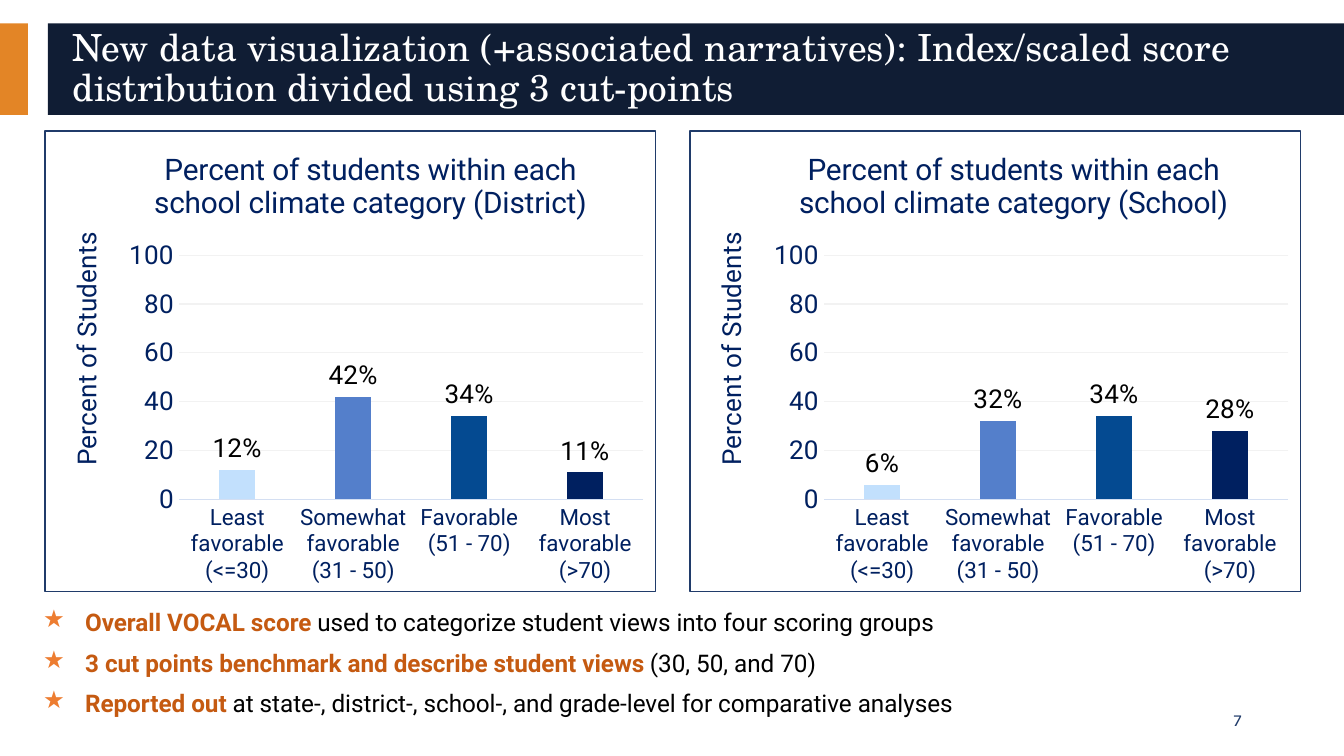
import lxml.etree
import pptx
import pptx.chart.data
import pptx.dml.color
import pptx.enum.chart
import pptx.enum.shapes
import pptx.enum.text
import pptx.oxml.ns
import pptx.util

Pt = pptx.util.Pt
qn = pptx.oxml.ns.qn

COLORS = {
    "orange": "E38526", "navy": "101D34", "white": "FFFFFF", "black": "000000",
    "border": "203B6A", "text": "002060", "axis": "D4DFF2", "grid": "F2F2F2",
    "star": "ED7D31", "strong": "C55A11",
}
BAR_COLORS = ["C2E0FD", "547FCB", "044A91", "002060"]
CATEGORIES = ["Least favorable\n(<=30)", "Somewhat favorable\n(31 - 50)",
              "Favorable\n(51 - 70)", "Most favorable\n(>70)"]
CHARTS = [("District", 23.75, [12, 42, 34, 11]), ("School", 369.25, [6, 32, 34, 28])]
BULLETS = [
    ("Overall VOCAL score ", "used to categorize student views into four scoring groups"),
    ("3 cut points benchmark and describe student views ", "(30, 50, and 70)"),
    ("Reported out ", "at state-, district-, school-, and grade-level for comparative analyses"),
]
TIGHT_FRAME = {
    "word_wrap": True, "vertical_anchor": pptx.enum.text.MSO_ANCHOR.MIDDLE,
    "margin_left": Pt(5.4), "margin_right": Pt(5.4),
    "margin_top": Pt(2.7), "margin_bottom": Pt(2.7),
}


def apply(target, values):
    for name, value in values.items():
        setattr(target, name, value)


def rgb(value):
    return pptx.dml.color.RGBColor.from_string(value)


def format_font(font, color, size, name="Roboto", bold=False):
    apply(font, {"name": name, "size": Pt(size), "bold": bold})
    font.color.rgb = rgb(COLORS[color])


def format_line(line, color):
    line.color.rgb = rgb(COLORS[color])
    line.width = Pt(0.75)


def add_band(page, left, width, color):
    band = page.shapes.add_shape(
        pptx.enum.shapes.MSO_SHAPE.RECTANGLE, Pt(left), Pt(12.5), Pt(width), Pt(49))
    band.shadow.inherit = False
    band.fill.solid()
    band.fill.fore_color.rgb = rgb(COLORS[color])
    band.line.fill.background()


def add_title(page, text):
    title = page.shapes.title
    page.shapes._spTree.append(title._element)
    apply(title, {"left": Pt(33.5), "top": Pt(17), "width": Pt(672), "height": Pt(40)})
    frame = title.text_frame
    apply(frame, TIGHT_FRAME)
    frame.auto_size = pptx.enum.text.MSO_AUTO_SIZE.NONE
    para = frame.paragraphs[0]
    apply(para, {"alignment": pptx.enum.text.PP_ALIGN.LEFT, "line_spacing": 0.9})
    span = para.add_run()
    span.text = text
    format_font(span.font, "white", 20, "TeX Gyre Schola")


def add_page_number(page, number):
    box = page.shapes.add_textbox(Pt(508.5), Pt(375), Pt(162), Pt(21.5))
    apply(box.text_frame, TIGHT_FRAME)
    para = box.text_frame.paragraphs[0]
    para.alignment = pptx.enum.text.PP_ALIGN.RIGHT
    span = para.add_run()
    span.text = number
    format_font(span.font, "border", 9, "Karla")


def set_layout(element, **values):
    layout = element.find(qn("c:layout"))
    if layout is None:
        layout = lxml.etree.SubElement(element, qn("c:layout"))
        element.insert(0, layout)
    manual = lxml.etree.SubElement(layout, qn("c:manualLayout"))
    for name, value in values.items():
        lxml.etree.SubElement(manual, qn(f"c:{name}")).set("val", str(value))


def set_chart_text(title, text, size, x, y):
    para = title.text_frame.paragraphs[0]
    span = para.add_run()
    span.text = text
    format_font(span.font, "text", size)
    set_layout(title._element, xMode="edge", yMode="edge", x=x, y=y)


def add_border(chart):
    properties = lxml.etree.Element(qn("c:spPr"))
    lxml.etree.SubElement(properties, qn("a:noFill"))
    line = lxml.etree.SubElement(properties, qn("a:ln"), w=str(Pt(0.75)))
    fill = lxml.etree.SubElement(line, qn("a:solidFill"))
    lxml.etree.SubElement(fill, qn("a:srgbClr"), val=COLORS["border"])
    chart._chartSpace.find(qn("c:chart")).addnext(properties)


def format_axes(chart):
    none = pptx.enum.chart.XL_TICK_MARK.NONE
    category_axis, value_axis = chart.category_axis, chart.value_axis
    for axis, size in ((category_axis, 12), (value_axis, 14)):
        apply(axis, {"major_tick_mark": none, "minor_tick_mark": none})
        format_font(axis.tick_labels.font, "text", size)
    category_axis.has_major_gridlines = False
    format_line(category_axis.format.line, "axis")
    apply(value_axis, {"minimum_scale": 0, "maximum_scale": 100, "major_unit": 20,
                       "has_major_gridlines": True})
    value_axis.format.line.fill.background()
    format_line(value_axis.major_gridlines.format.line, "grid")
    set_chart_text(value_axis.axis_title, "Percent of Students", 14, 0.03, 0.21)


def format_bars(plot):
    apply(plot, {"gap_width": 219, "overlap": -27, "vary_by_categories": False,
                 "has_data_labels": True})
    labels = plot.data_labels
    apply(labels, {"show_value": True, "number_format": '0"%"',
                   "number_format_is_linked": False,
                   "position": pptx.enum.chart.XL_LABEL_POSITION.OUTSIDE_END})
    format_font(labels.font, "black", 14)
    series = plot.series[0]
    series.format.fill.solid()
    series.format.fill.fore_color.rgb = rgb(COLORS["border"])
    for index, color in enumerate(BAR_COLORS):
        fill = series.points[index].format.fill
        fill.solid()
        fill.fore_color.rgb = rgb(color)


def add_climate_chart(page, group, left, values):
    data = pptx.chart.data.CategoryChartData()
    data.categories = CATEGORIES
    data.add_series("Series 1", values)
    chart = page.shapes.add_chart(
        pptx.enum.chart.XL_CHART_TYPE.COLUMN_CLUSTERED,
        Pt(left), Pt(69.75), Pt(327.75), Pt(247.5), data).chart
    apply(chart, {"has_legend": False, "has_title": True})
    format_font(chart.font, "border", 14, "Arial")
    text = f"Percent of students within each school climate category ({group})"
    set_chart_text(chart.chart_title, text, 16, 0.17, 0.03)
    format_axes(chart)
    format_bars(chart.plots[0])
    set_layout(chart._chartSpace.find(".//" + qn("c:plotArea")),
               layoutTarget="inner", xMode="edge", yMode="edge",
               x=0.22, y=0.27, w=0.76, h=0.53)
    add_border(chart)


def add_star(para):
    properties = para._p.get_or_add_pPr()
    properties.set("marL", str(Pt(22.5)))
    properties.set("indent", str(-Pt(22.5)))
    color = lxml.etree.SubElement(properties, qn("a:buClr"))
    lxml.etree.SubElement(color, qn("a:srgbClr"), val=COLORS["star"])
    lxml.etree.SubElement(properties, qn("a:buChar"), char="★")


def add_bullets(page):
    box = page.shapes.add_textbox(Pt(16), Pt(322), Pt(663), Pt(67))
    frame = box.text_frame
    apply(frame, {"word_wrap": True,
                  "auto_size": pptx.enum.text.MSO_AUTO_SIZE.SHAPE_TO_FIT_TEXT})
    for index, (strong, rest) in enumerate(BULLETS):
        para = frame.add_paragraph() if index else frame.paragraphs[0]
        add_star(para)
        if index < len(BULLETS) - 1:
            para.space_after = Pt(6)
        for text, color, bold in ((strong, "strong", True), (rest, "black", False)):
            span = para.add_run()
            span.text = text
            format_font(span.font, color, 13, bold=bold)


def main():
    deck = pptx.Presentation()
    apply(deck, {"slide_width": Pt(720), "slide_height": Pt(405)})
    page = deck.slides.add_slide(deck.slide_layouts[5])
    add_band(page, 0, 15, "orange")
    add_band(page, 25.75, 694.25, "navy")
    add_title(page, "New data visualization (+associated narratives): "
                    "Index/scaled score distribution divided using 3 cut-points")
    add_page_number(page, "7")
    for group, left, values in CHARTS:
        add_climate_chart(page, group, left, values)
    add_bullets(page)
    deck.save("out.pptx")


if __name__ == "__main__":
    main()
